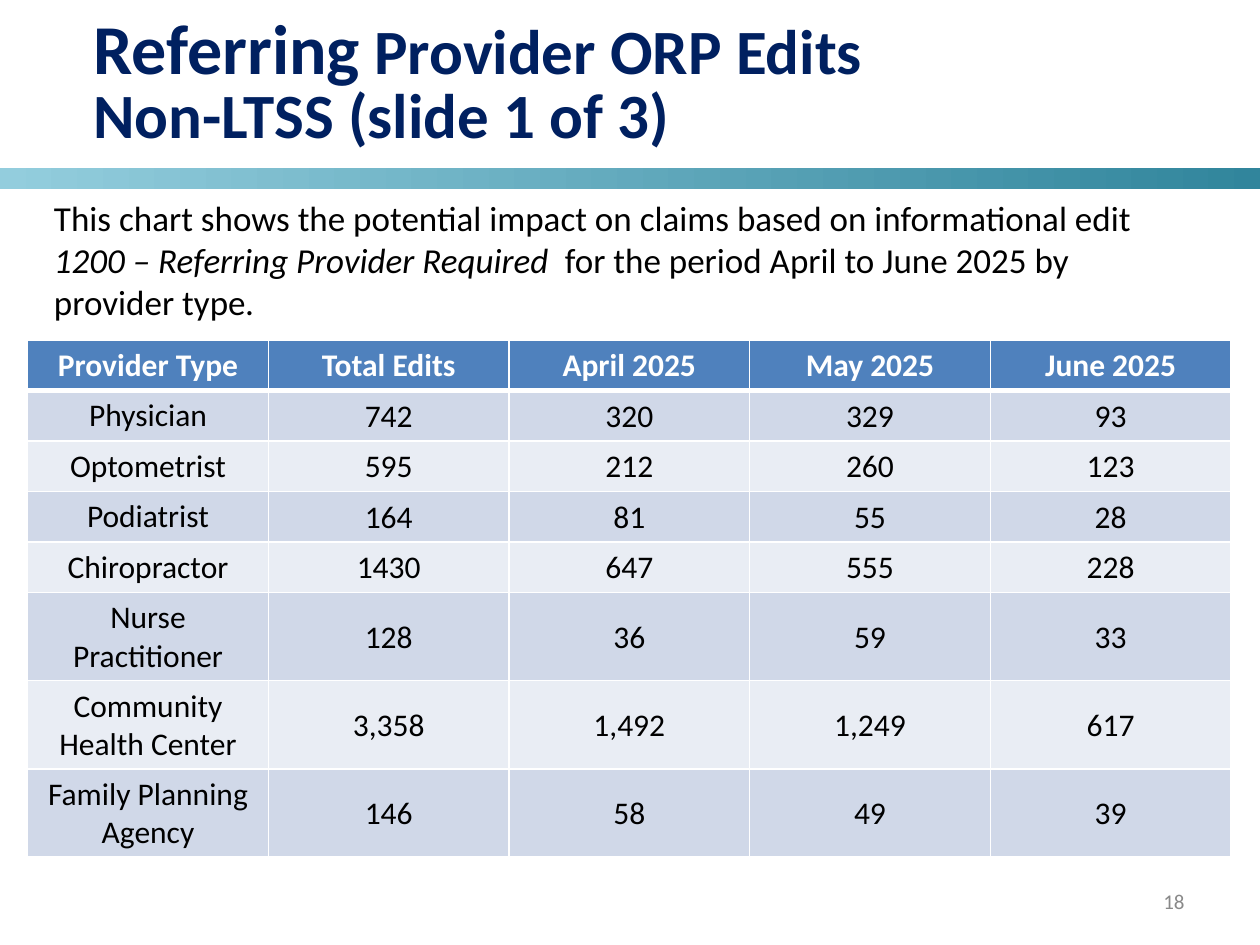
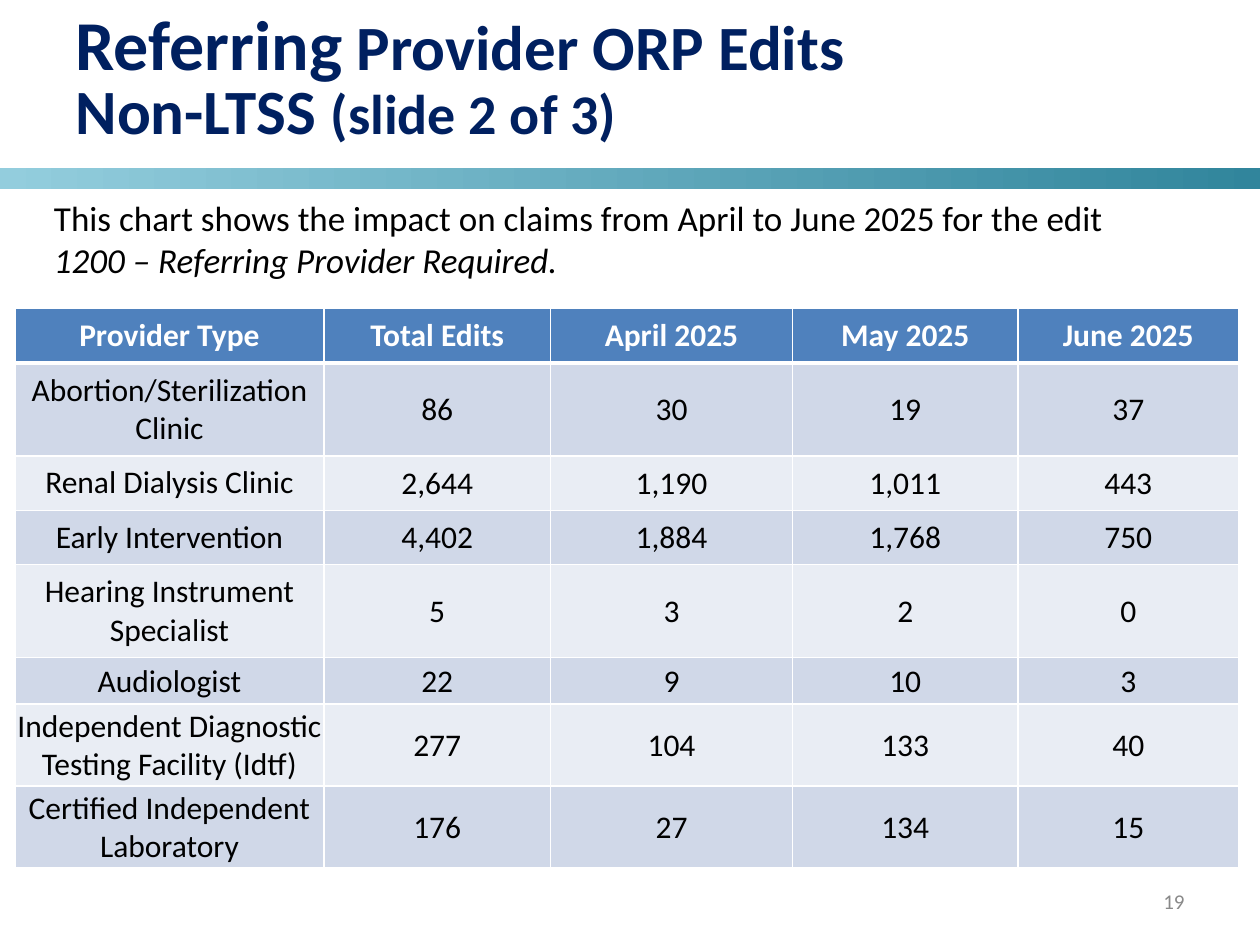
from dataclasses import dataclass

from lxml.etree import SubElement
from pptx import Presentation
from pptx.dml.color import RGBColor
from pptx.enum.shapes import MSO_SHAPE
from pptx.enum.text import MSO_ANCHOR, MSO_AUTO_SIZE, PP_ALIGN
from pptx.oxml.ns import qn
from pptx.util import Inches, Pt

COLORS = {
    "navy": "002060",
    "black": "000000",
    "white": "FFFFFF",
    "gray": "898989",
    "head": "4F81BD",
    "odd": "D0D8E8",
    "even": "E9EDF4",
    "deep": "31859C",
    "pale": "93CDDD",
}
STYLES = {
    "big": {"size": 40, "bold": True, "color": "navy"},
    "title": {"size": 36, "bold": True, "color": "navy"},
    "small": {"size": 32, "bold": True, "color": "navy"},
    "body": {"size": 20, "color": "black"},
    "ital": {"size": 20, "italic": True, "color": "black"},
    "head": {"size": 18, "bold": True, "color": "white"},
    "cell": {"size": 18, "bold": False, "color": "black"},
    "page": {"size": 12, "color": "gray"},
}
HEADS = ("Provider Type", "Total Edits", "April 2025", "May 2025", "June 2025")
TIGHT = {"margin_left": 0.01, "margin_top": 0.01, "margin_right": 0.01, "margin_bottom": 0}


@dataclass
class Run:
    text: str
    style: str


@dataclass
class Grid:
    left: float
    top: float
    widths: list[float]
    heights: list[float]
    rows: list[tuple[str, ...]]
    tight_from: int  # first row whose label has tight margins


@dataclass
class Page:
    number: int
    title_at: tuple[float, float]
    ending: list[Run]
    intro: list[Run]
    intro_height: float
    grid: Grid


PAGES = [
    Page(
        18, (0.64, 0.31),
        [Run("Non-LTSS (slide 1 of 3)", "title")],
        [
            Run("This chart shows the potential impact on claims based on informational edit ", "body"),
            Run("1200 – Referring Provider Required ", "ital"),
            Run(" for the period April to June 2025 by provider type", "body"),
            Run(".", "ital"),
        ],
        1.11,
        Grid(
            0.22, 2.7, [1.91] * 5, [0.35] * 6 + [0.52, 0.45],
            [
                ("Physician", "742", "320", "329", "93"),
                ("Optometrist", "595", "212", "260", "123"),
                ("Podiatrist", "164", "81", "55", "28"),
                ("Chiropractor", "1430", "647", "555", "228"),
                ("Nurse Practitioner", "128", "36", "59", "33"),
                ("Community Health Center", "3,358", "1,492", "1,249", "617"),
                ("Family Planning Agency", "146", "58", "49", "39"),
            ],
            8,
        ),
    ),
    Page(
        19, (0.5, 0.28),
        [Run("Non-LTSS ", "title"), Run("(slide 2 of 3)", "small")],
        [
            Run("This chart shows the impact on claims from April to June 2025 for the edit ", "body"),
            Run("1200 – Referring Provider Required.", "ital"),
        ],
        0.77,
        Grid(
            0.12, 2.45, [2.45, 1.8, 1.92, 1.79, 1.75],
            [0.43, 0.74, 0.43, 0.43, 0.74, 0.37, 0.65, 0.65],
            [
                ("Abortion/Sterilization Clinic", "86", "30", "19", "37"),
                ("Renal Dialysis Clinic", "2,644", "1,190", "1,011", "443"),
                ("Early Intervention", "4,402", "1,884", "1,768", "750"),
                ("Hearing Instrument Specialist", "5", "3", "2", "0"),
                ("Audiologist", "22", "9", "10", "3"),
                ("Independent Diagnostic Testing Facility (Idtf)", "277", "104", "133", "40"),
                ("Certified Independent Laboratory", "176", "27", "134", "15"),
            ],
            5,
        ),
    ),
]


def color(name: str) -> RGBColor:
    return RGBColor.from_string(COLORS[name])


def write(para, runs: list[Run]) -> None:
    for item in runs:
        run = para.add_run()
        run.text = item.text
        run.font.name = "Calibri"
        for key, value in STYLES[item.style].items():
            if key == "color":
                run.font.color.rgb = color(value)
            else:
                setattr(run.font, key, Pt(value) if key == "size" else value)


def add_band(slide) -> None:
    band = slide.shapes.add_shape(
        MSO_SHAPE.RECTANGLE, 0, Inches(1.33), Inches(10), Inches(0.17))
    band.shadow.inherit = False
    band.line.fill.background()
    band.fill.gradient()
    band.fill.gradient_angle = 180
    for stop, name in zip(band.fill.gradient_stops, ("deep", "pale")):
        stop.color.rgb = color(name)


def add_title(slide, page: Page) -> None:
    title = slide.shapes.title
    title.left, title.top = (Inches(n) for n in page.title_at)
    title.width, title.height = Inches(7.17), Inches(0.78)
    frame = title.text_frame
    frame.auto_size = MSO_AUTO_SIZE.NONE
    frame.vertical_anchor = MSO_ANCHOR.MIDDLE
    para = frame.paragraphs[0]
    para.alignment = PP_ALIGN.LEFT
    para.line_spacing = Pt(36)
    write(para, [Run("Referring", "big"), Run(" Provider ORP Edits", "title")])
    para.add_line_break()
    write(para, page.ending)


def add_text(slide, box: tuple[float, ...], runs: list[Run],
             align=PP_ALIGN.LEFT, anchor=MSO_ANCHOR.TOP) -> None:
    frame = slide.shapes.add_textbox(*map(Inches, box)).text_frame
    frame.word_wrap = True
    frame.vertical_anchor = anchor
    frame.paragraphs[0].alignment = align
    write(frame.paragraphs[0], runs)


def add_edges(cell, row: int) -> None:
    """Give a cell white borders, thick between the heading and the first row."""
    thick = {0: "lnB", 1: "lnT"}.get(row)
    props = cell._tc.get_or_add_tcPr()
    for tag in ("lnL", "lnR", "lnT", "lnB"):
        line = SubElement(props, qn(f"a:{tag}"), w=str(Pt(3 if tag == thick else 1)))
        fill = SubElement(line, qn("a:solidFill"))
        SubElement(fill, qn("a:srgbClr"), val=COLORS["white"])


def add_grid(slide, grid: Grid) -> None:
    rows = [HEADS, *grid.rows]
    table = slide.shapes.add_table(
        len(rows), len(HEADS), Inches(grid.left), Inches(grid.top),
        Inches(sum(grid.widths)), Inches(sum(grid.heights))).table
    for col, width in zip(table.columns, grid.widths):
        col.width = Inches(width)
    for r, texts in enumerate(rows):
        table.rows[r].height = Inches(grid.heights[r])
        shade = "head" if r == 0 else "odd" if r % 2 else "even"
        for c, text in enumerate(texts):
            cell = table.cell(r, c)
            add_edges(cell, r)
            cell.fill.solid()
            cell.fill.fore_color.rgb = color(shade)
            cell.vertical_anchor = MSO_ANCHOR.MIDDLE
            if r and (c or r >= grid.tight_from):
                for side, size in TIGHT.items():
                    setattr(cell, side, Inches(size))
            para = cell.text_frame.paragraphs[0]
            para.alignment = PP_ALIGN.CENTER
            write(para, [Run(text, "cell" if r else "head")])


def main() -> None:
    deck = Presentation()
    deck.slide_width, deck.slide_height = Inches(10), Inches(7.5)
    for page in PAGES:
        slide = deck.slides.add_slide(deck.slide_layouts.get_by_name("Title Only"))
        add_band(slide)
        add_title(slide, page)
        add_text(slide, (0.33, 1.51, 8.92, page.intro_height), page.intro)
        add_grid(slide, page.grid)
        add_text(slide, (7.17, 6.95, 2.33, 0.4), [Run(str(page.number), "page")],
                 PP_ALIGN.RIGHT, MSO_ANCHOR.MIDDLE)
    deck.save("out.pptx")


if __name__ == "__main__":
    main()
